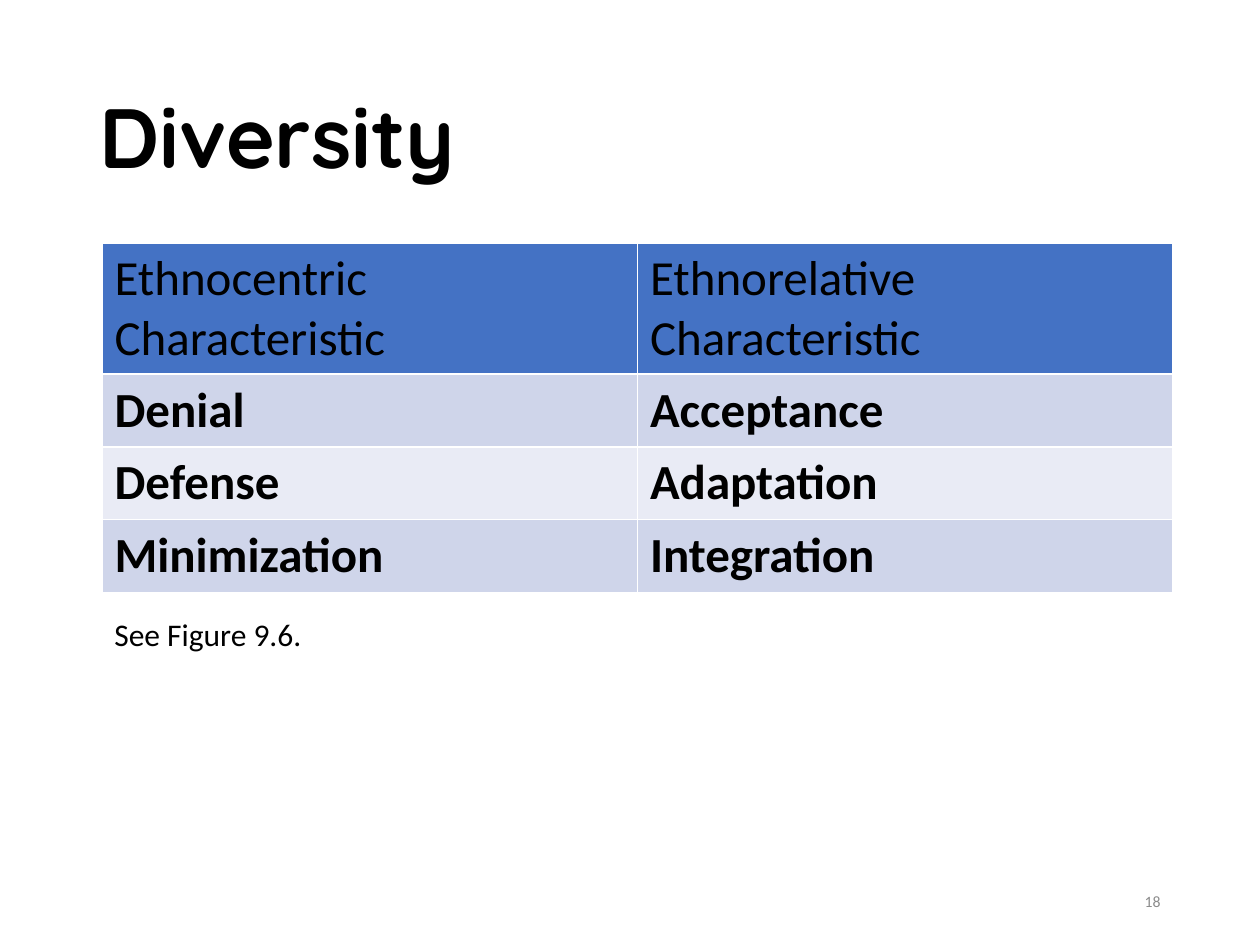
from pptx import Presentation
from pptx import util as u
from pptx.dml.color import RGBColor
from pptx.enum import text as t

WIDTH, HEIGHT = u.Inches(10), u.Inches(7.5)
LEFT, RIGHT = 0.081, 0.931  # content edges as shares of the slide width
BLACK, GREY = "000000", "8C8C8C"
HEADER_FILL, BAND_FILLS = "4472C4", ("CFD5EA", "E9EBF5")

CHARACTERISTICS = [
    ("Ethnocentric Characteristic", "Ethnorelative Characteristic"),
    ("Denial", "Acceptance"),
    ("Defense", "Adaptation"),
    ("Minimization", "Integration"),
]


def color(hex_string):
    return RGBColor.from_string(hex_string)


def share(left, top, width, height):
    """Turn shares of the slide's size into lengths."""
    return (round(left * WIDTH), round(top * HEIGHT),
            round(width * WIDTH), round(height * HEIGHT))


def write(frame, words, size, font="Calibri", bold=False, fill=BLACK, **paragraph_format):
    paragraph = frame.paragraphs[0]
    for name, value in paragraph_format.items():
        setattr(paragraph, name, value)
    run = paragraph.add_run()
    run.text = words
    for name, value in {"name": font, "size": u.Pt(size), "bold": bold}.items():
        setattr(run.font, name, value)
    run.font.color.rgb = color(fill)


def add_text(slide, box, words, size, frame_format, **text_format):
    frame = slide.shapes.add_textbox(*share(*box)).text_frame
    for name, value in frame_format.items():
        setattr(frame, name, value)
    write(frame, words, size, **text_format)


def add_characteristics(slide, rows, top, header_height, row_height):
    height = header_height + row_height * (len(rows) - 1)
    table = slide.shapes.add_table(
        len(rows), len(rows[0]), *share(LEFT, top, RIGHT - LEFT, height)).table
    for row, words_in_row in enumerate(rows):
        is_header = row == 0
        table.rows[row].height = round(HEIGHT * (header_height if is_header else row_height))
        fill = HEADER_FILL if is_header else BAND_FILLS[(row - 1) % 2]
        for column, words in enumerate(words_in_row):
            cell = table.cell(row, column)
            cell.fill.solid()
            cell.fill.fore_color.rgb = color(fill)
            write(cell.text_frame, words, 28, bold=not is_header)


def main():
    presentation = Presentation()
    presentation.slide_width, presentation.slide_height = WIDTH, HEIGHT
    slide = presentation.slides.add_slide(presentation.slide_layouts[6])
    centred = {"word_wrap": True, "vertical_anchor": t.MSO_ANCHOR.MIDDLE}

    # Title
    add_text(slide, (0.069, 0.053, 0.862, 0.193), "Diversity", 48, centred,
             font="Quicksand", bold=True, line_spacing=0.9)

    # Table of characteristics
    add_characteristics(slide, CHARACTERISTICS, 0.257, 0.139, 0.077)

    # Slide number
    add_text(slide, (RIGHT - 0.225, 0.927, 0.225, 0.053), "18", 9, centred,
             fill=GREY, alignment=t.PP_ALIGN.RIGHT)

    # Reference below the table
    add_text(slide, (LEFT, 0.644, 0.17, 0.053), "See Figure 9.6.", 18,
             {"word_wrap": False, "auto_size": t.MSO_AUTO_SIZE.SHAPE_TO_FIT_TEXT})

    presentation.save("out.pptx")


if __name__ == "__main__":
    main()
